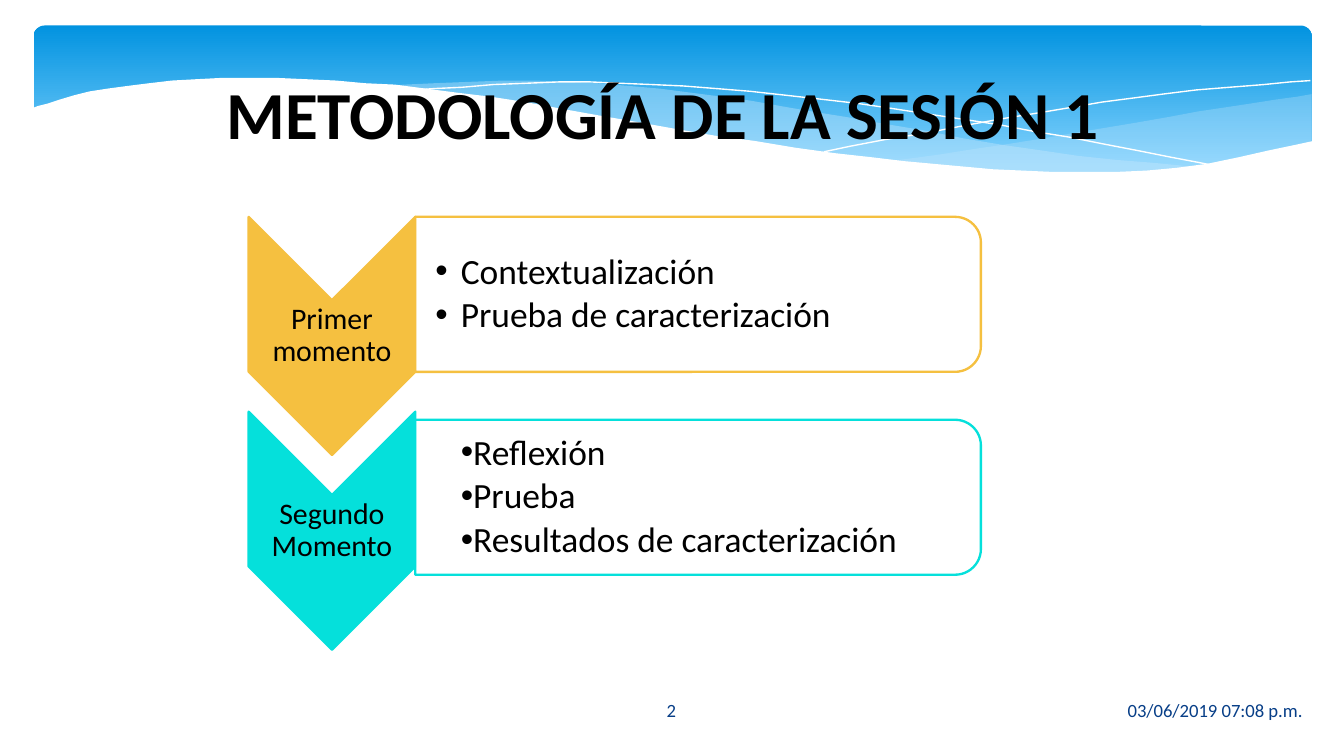
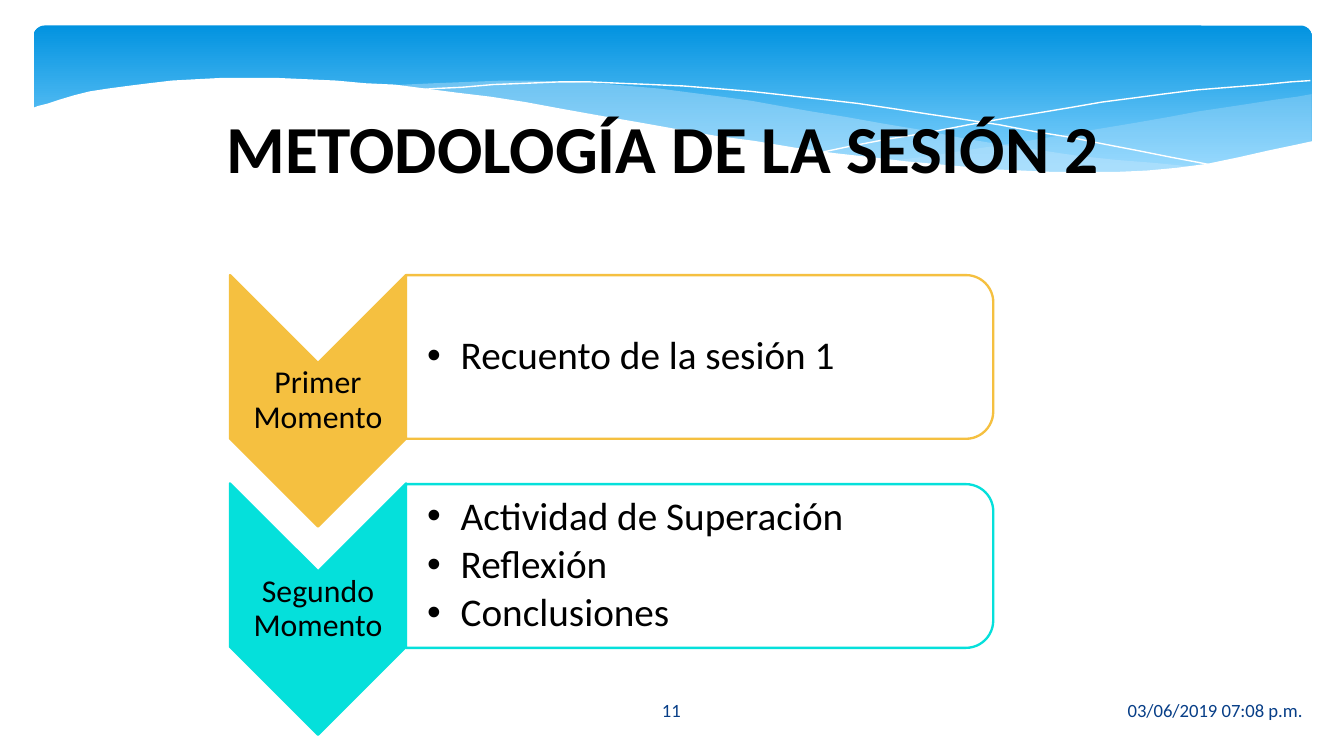
from lxml import etree
from pptx import Presentation
from pptx.dml.color import RGBColor
from pptx.enum import shapes, text
from pptx.oxml.ns import qn
from pptx.util import Pt

THEME = dict(
    font="Calibri", ink="000000", footer="073E87", white="FFFFFF", mist="C6E7FC",
    sky=[(0, "0293E0"), (0.9, "83D3FE")], moments=["F5C040", "05E0DB"],
    title_size=36, footer_size=10, outline=1.25,
)
SHAPE, ALIGN, ANCHOR = shapes.MSO_SHAPE, text.PP_ALIGN, text.MSO_ANCHOR

# Waves of the band: each edge is a smooth curve through its knots, in steps of 0.72 pt
STEP = Pt(0.72)
SAMPLES = 5
WAVES = [
    dict(fill=THEME["mist"], alpha=29, edges=[
        [(976, 70), (891, 83), (776, 103), (661, 120)],
        [(661, 120), (745, 127), (835, 129), (905, 122), (976, 106)]]),
    dict(fill=THEME["mist"], alpha=40, edges=[
        [(893, 125), (775, 112), (629, 87), (514, 69), (399, 60), (286, 64)],
        [(286, 64), (404, 79), (566, 107), (695, 123), (796, 130), (893, 125)]]),
    dict(line=THEME["white"], edges=[
        [(309, 67), (416, 61), (533, 66), (665, 81), (795, 102), (907, 124)]]),
    dict(line=THEME["white"], edges=[[(613, 113), (748, 88), (866, 70), (975, 60)]]),
    dict(fill=THEME["white"], edges=[
        [(977, 105), (875, 125), (761, 127), (648, 117), (503, 96), (365, 72), (250, 60),
         (146, 59), (67, 68), (23, 81)],
        [(23, 168), (977, 168)]]),
]

SLIDES = [
    dict(title="METODOLOGÍA DE LA SESIÓN 1", title_top=18, number="2",
         left=133.2, top=116.2, chevron=89.3, panel=303, pitches=(104.4, 108.7),
         label_size=16, list_size=19, indent=13.7,
         moments=[("Primer momento", ["Contextualización", "Prueba de caracterización"], True),
                  ("Segundo Momento",
                   ["Reflexión", "Prueba", "Resultados de caracterización"], False)]),
    dict(title="METODOLOGÍA DE LA SESIÓN 2", title_top=36, number="11",
         left=123.2, top=147.4, chevron=94.3, panel=314.6, pitches=(111.6, 112),
         label_size=17, list_size=21, indent=18,
         moments=[("Primer Momento", ["Recuento de la sesión 1"], True),
                  ("Segundo Momento",
                   ["Actividad de Superación", "Reflexión", "Conclusiones"], True)]),
]


def paint(sp, fill=None, alpha=100, line=None, width=0):
    sp.shadow.inherit = False
    if fill:
        sp.fill.solid()
        sp.fill.fore_color.rgb = RGBColor.from_string(fill)
        if alpha < 100:
            color = sp.element.find(".//" + qn("a:srgbClr"))
            etree.SubElement(color, qn("a:alpha"), val=str(alpha * 1000))
    else:
        sp.fill.background()
    if line:
        sp.line.color.rgb = RGBColor.from_string(line)
        sp.line.width = Pt(width)
    else:
        sp.line.fill.background()


def write(sp, box, lines, size, align, color=THEME["ink"], bold=False, anchor=ANCHOR.MIDDLE,
          insets=(7.2, 3.6, 7.2, 3.6), spacing=1.0, after=0, bullet=None):
    for name, value in zip(("left", "top", "width", "height"), box):
        setattr(sp, name, Pt(value))
    tf = sp.text_frame
    frame = dict(word_wrap=True, auto_size=text.MSO_AUTO_SIZE.NONE, vertical_anchor=anchor)
    for side, value in zip(("left", "top", "right", "bottom"), insets):
        frame["margin_" + side] = Pt(value)
    for name, value in frame.items():
        setattr(tf, name, value)
    for i, line in enumerate(lines):
        p = tf.paragraphs[0] if i == 0 else tf.add_paragraph()
        if bullet:
            pPr = p._p.get_or_add_pPr()
            for name, value in zip(("marL", "indent"), bullet):
                pPr.set(name, str(Pt(value)))
            etree.SubElement(pPr, qn("a:buChar"), char="•")
        for name, value in dict(alignment=align, line_spacing=spacing, space_before=Pt(0),
                                space_after=Pt(after)).items():
            setattr(p, name, value)
        r = p.add_run()
        r.text = line
        for name, value in dict(name=THEME["font"], size=Pt(size), bold=bold).items():
            setattr(r.font, name, value)
        r.font.color.rgb = RGBColor.from_string(color)


prs = Presentation()
prs.slide_width, prs.slide_height = Pt(720), Pt(405)
layout = prs.slide_layouts[3]

for n, page in enumerate(SLIDES):
    s = prs.slides.add_slide(layout)

    # Blue band with waves, built once and handed to the layout
    if n == 0:
        sky = s.shapes.add_shape(SHAPE.ROUNDED_RECTANGLE, Pt(18), Pt(13.7), Pt(684.7), Pt(84.2))
        sky.adjustments[0] = 0.07
        paint(sky)
        sky.fill.gradient()
        sky.fill.gradient_angle = 270
        for stop, (position, color) in zip(sky.fill.gradient_stops, THEME["sky"]):
            stop.position = position
            stop.color.rgb = RGBColor.from_string(color)
        band = [sky]
        for wave in WAVES:
            points = []
            for edge in wave["edges"]:
                knots = [edge[0], *edge, edge[-1]]
                points.append(edge[0])
                for quad in zip(knots, knots[1:], knots[2:], knots[3:]):
                    for k in range(1, SAMPLES + 1):
                        t = k / SAMPLES
                        points.append([
                            b + t / 2 * (c - a + t * (2 * a - 5 * b + 4 * c - d
                                                      + t * (3 * b - a - 3 * c + d)))
                            for a, b, c, d in zip(*quad)])
            outline = s.shapes.build_freeform(*points[0], scale=STEP)
            outline.add_line_segments(points[1:], close="fill" in wave)
            sp = outline.convert_to_shape()
            paint(sp, wave.get("fill"), wave.get("alpha", 100), wave.get("line"))
            band.append(sp)
        for i, sp in enumerate(band):
            layout.shapes.element.insert(2 + i, sp.element)

    # Title and footers
    write(s.shapes.title, (31, page["title_top"], 648, 67.7), [page["title"]],
          THEME["title_size"], ALIGN.CENTER, bold=True, anchor=ANCHOR.BOTTOM)
    for words, left, width, align in [("03/06/2019 07:08 p.m.", 406.8, 298, ALIGN.RIGHT),
                                      (page["number"], 314, 91.4, ALIGN.CENTER)]:
        write(s.shapes.add_textbox(0, 0, 0, 0), (left, 369.4, width, 21.6), [words],
              THEME["footer_size"], align, THEME["footer"])

    # Moments: a chevron pointing down, its label, and a panel with the list
    across, wide = page["chevron"], page["panel"]
    down, tall, label_tall = across / 0.7, 0.93 * across, 0.43 * across
    panel_left = page["left"] + across
    for i, (label, items, hanging) in enumerate(page["moments"]):
        color = THEME["moments"][i]
        chevron_top, panel_top = [page["top"] + i * pitch for pitch in page["pitches"]]
        for kind, left, top, w, h, fill, alpha in [
                (SHAPE.CHEVRON, page["left"], chevron_top, across, down, color, 100),
                (SHAPE.ROUND_2_SAME_RECTANGLE, panel_left, panel_top, wide, tall,
                 THEME["white"], 90)]:
            # The quarter turn swaps width and height about the centre
            turn = (w - h) / 2
            sp = s.shapes.add_shape(kind, Pt(left + turn), Pt(top - turn), Pt(h), Pt(w))
            sp.rotation = 90
            paint(sp, fill, alpha, color, THEME["outline"])
        write(s.shapes.add_textbox(0, 0, 0, 0),
              (page["left"], chevron_top + (down - label_tall) / 2, across, label_tall),
              [label], page["label_size"], ALIGN.CENTER, insets=(0.7,) * 4,
              spacing=0.9, after=0.35 * page["label_size"])
        body = s.placeholders[i + 1]
        s.shapes.element.append(body.element)
        write(body, (panel_left, panel_top + 4, wide - 4, tall - 8), items,
              page["list_size"], ALIGN.LEFT, insets=(0.12 * across, 0.7, 0.7, 0.7),
              spacing=0.9, after=0.15 * page["list_size"],
              bullet=(page["indent"], -page["indent"] if hanging else 0))

prs.save("out.pptx")
